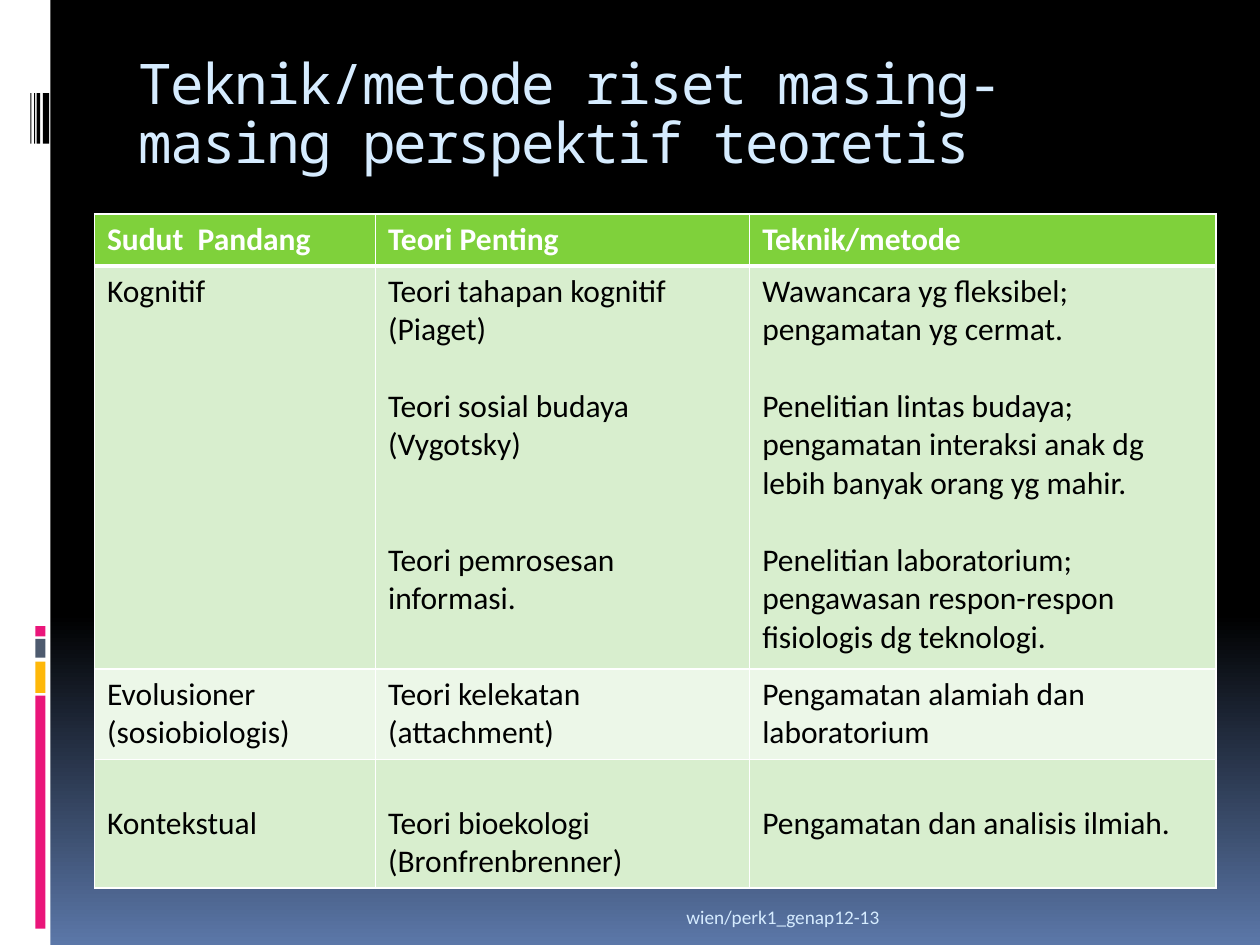
"""Build a slide with a table of research techniques for each theoretical perspective."""
from dataclasses import dataclass

from lxml.etree import SubElement
from pptx import Presentation
from pptx.dml.color import RGBColor
from pptx.enum.shapes import MSO_SHAPE
from pptx.enum.text import MSO_ANCHOR, MSO_AUTO_SIZE, PP_ALIGN
from pptx.oxml.ns import qn
from pptx.util import Inches, Pt


@dataclass(frozen=True)
class Theme:
    white: str = "FFFFFF"
    black: str = "000000"
    sky: str = "5B77A8"
    pale: str = "D6ECFF"
    pink: str = "EA157A"
    amber: str = "FEB80A"
    slate: str = "4E5B6F"
    header: str = "7FD13B"
    band: str = "D8EECE"
    light: str = "ECF7E8"
    title_font: str = "Noto Sans Mono"
    body_font: str = "Calibri"
    title_size: int = 32
    body_size: int = 18
    footer_size: int = 11
    gap: int = 22


T = Theme()


def style(p, size, color, font=T.body_font, bold=False):
    for r in p.runs:
        r.font.size = Pt(size)
        r.font.name = font
        r.font.bold = bold
        r.font.color.rgb = RGBColor.from_string(color)


def add_border(cell, side, width):
    ln = SubElement(cell._tc.get_or_add_tcPr(), qn(f"a:ln{side}"), w=str(Pt(width)))
    fill = SubElement(ln, qn("a:solidFill"))
    SubElement(fill, qn("a:srgbClr"), val=T.white)


prs = Presentation()
prs.slide_width, prs.slide_height = Inches(10), Inches(7.5)
s = prs.slides.add_slide(prs.slide_layouts[5])

bg = s.background.fill
bg.gradient()
bg.gradient_angle = 270
for stop, position, color in zip(bg.gradient_stops, (0.65, 1), (T.black, T.sky)):
    stop.position = position
    stop.color.rgb = RGBColor.from_string(color)

side_bars = [
    (0, 0, 0.4, 7.5, T.white),
    (0.28, 5.52, 0.08, 1.85, T.pink),
    (0.28, 5.25, 0.08, 0.25, T.amber),
    (0.28, 5.07, 0.08, 0.15, T.slate),
    (0.28, 4.97, 0.08, 0.08, T.pink),
    (0.34, 0.74, 0.05, 0.4, T.black),
    (0.29, 0.74, 0.03, 0.4, T.black),
    (0.27, 0.74, 0.01, 0.4, T.black),
    (0.24, 0.74, 0.01, 0.4, T.black),
]
for *box, color in side_bars:
    sp = s.shapes.add_shape(MSO_SHAPE.RECTANGLE, *map(Inches, box))
    sp.shadow.inherit = False
    sp.fill.solid()
    sp.fill.fore_color.rgb = RGBColor.from_string(color)
    sp.line.fill.background()

title = s.shapes.title
title.left, title.top, title.width, title.height = map(Inches, (1, 0.36, 8.5, 1))
tf = title.text_frame
tf.text = "Teknik/metode riset masing-masing perspektif teoretis"
tf.word_wrap = True
tf.auto_size = MSO_AUTO_SIZE.NONE
tf.vertical_anchor = MSO_ANCHOR.TOP
tf.margin_top = Inches(0.09)
p = tf.paragraphs[0]
p.alignment = PP_ALIGN.LEFT
p.line_spacing = 0.88
style(p, T.title_size, T.pale, T.title_font)
p.runs[0]._r.get_or_add_rPr().set("spc", "-100")

footer = s.shapes.add_textbox(*map(Inches, (1, 7.02, 6.08, 0.4)))
tf = footer.text_frame
tf.text = "wien/perk1_genap12-13"
tf.word_wrap = True
tf.vertical_anchor = MSO_ANCHOR.BOTTOM
tf.paragraphs[0].alignment = PP_ALIGN.RIGHT
style(tf.paragraphs[0], T.footer_size, T.pale)

rows = [
    ["Sudut  Pandang", "Teori Penting", "Teknik/metode"],
    [
        "Kognitif",
        "Teori tahapan kognitif (Piaget)\nTeori sosial budaya (Vygotsky)\n"
        "Teori pemrosesan informasi.",
        "Wawancara yg fleksibel; pengamatan yg cermat.\n"
        "Penelitian lintas budaya; pengamatan interaksi anak dg lebih banyak orang yg mahir.\n"
        "Penelitian laboratorium; pengawasan respon-respon fisiologis dg teknologi.",
    ],
    [
        "Evolusioner (sosiobiologis)",
        "Teori kelekatan (attachment)",
        "Pengamatan alamiah dan laboratorium",
    ],
    ["Kontekstual", "Teori bioekologi (Bronfrenbrenner)", "Pengamatan dan analisis ilmiah."],
]
col_widths = [2.23, 2.97, 3.7]
row_heights = [0.41, 3.2, 0.72, 1.02]
row_fills = [T.header, T.band, T.light, T.band]

frame = s.shapes.add_table(len(rows), len(col_widths), *map(Inches, (0.75, 1.7, 8.9, 5.35)))
table = frame.table
for column, width in zip(table.columns, col_widths):
    column.width = Inches(width)
for i, (texts, height, color) in enumerate(zip(rows, row_heights, row_fills)):
    table.rows[i].height = Inches(height)
    for j, text in enumerate(texts):
        cell = table.cell(i, j)
        cell.text_frame.text = text
        for side in "LRTB":
            add_border(cell, side, 3 if (i, side) in ((0, "B"), (1, "T")) else 1)
        cell.fill.solid()
        cell.fill.fore_color.rgb = RGBColor.from_string(color)
        for p in cell.text_frame.paragraphs:
            style(p, T.body_size, T.black if i else T.white, bold=i == 0)
        for p in cell.text_frame.paragraphs[1:]:
            p.space_before = Pt(T.gap)

table.cell(1, 1).text_frame.paragraphs[2].space_before = Pt(2 * T.gap)
for cell in table.rows[3].cells:
    cell.margin_top = Inches(0.05) + Pt(T.gap)

prs.save("out.pptx")
